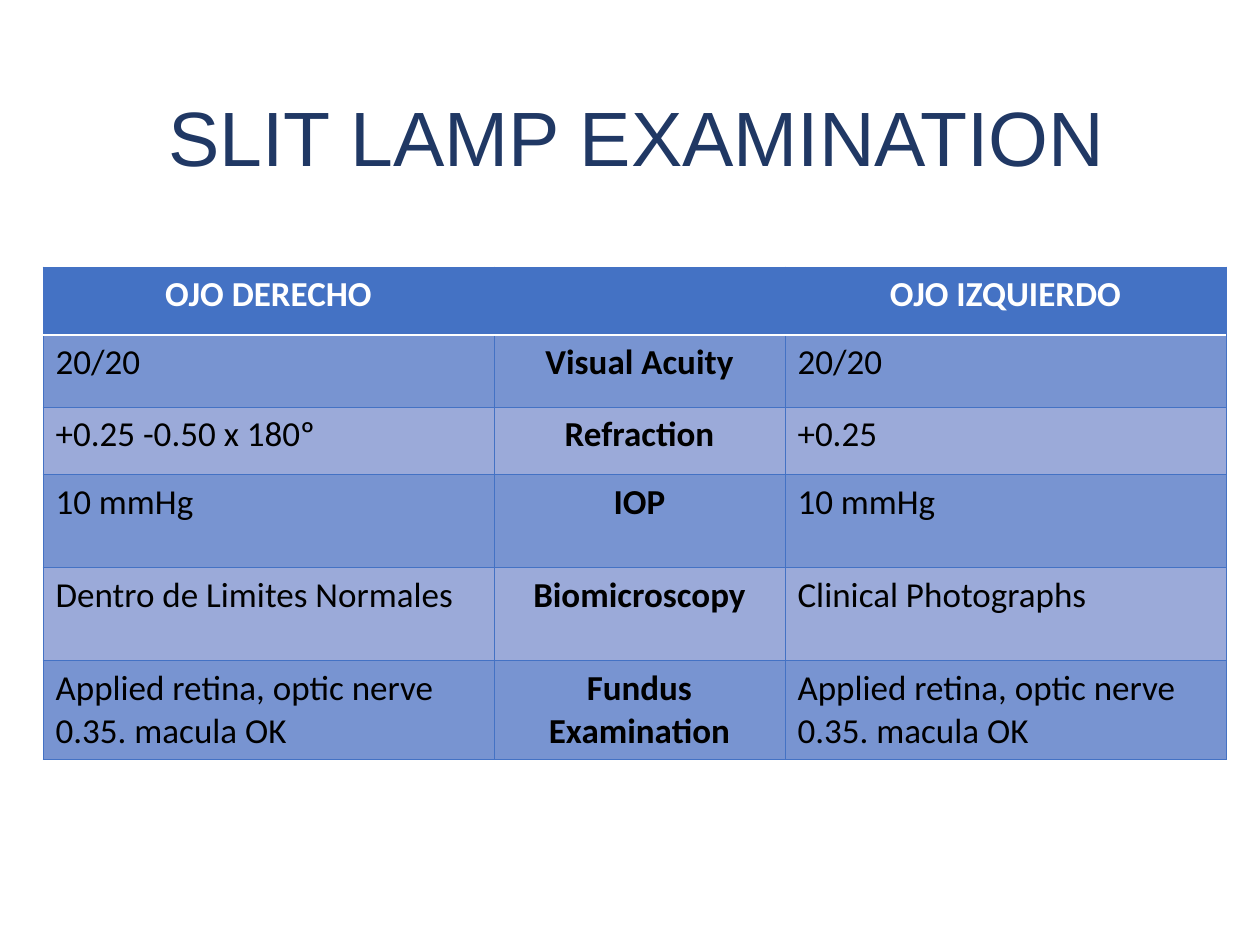
from lxml.etree import SubElement
from pptx import Presentation
from pptx.dml.color import RGBColor
from pptx.enum.text import MSO_ANCHOR, PP_ALIGN
from pptx.oxml.ns import qn
from pptx.util import Emu, Pt

TITLE = "SLIT LAMP EXAMINATION"
EXAMINATION_ROWS = [
    ("OJO DERECHO", "", "OJO IZQUIERDO"),
    ("20/20", "Visual Acuity", "20/20"),
    ("+0.25 -0.50 x 180º", "Refraction", "+0.25"),
    ("10 mmHg", "IOP", "10 mmHg"),
    ("Dentro de Limites Normales", "Biomicroscopy", "Clinical Photographs"),
    ("Applied retina, optic nerve 0.35. macula OK", "Fundus Examination",
     "Applied retina, optic nerve 0.35. macula OK"),
]
COLUMN_WIDTHS = [451, 291, 441]
ROW_HEIGHTS = [68, 72, 68, 93, 93, 99]

NAVY, BLUE, WHITE, BLACK = "203864", "4472C4", "FFFFFF", "000000"
BANDS = ["9BAAD9", "7894D1"]


def px(length):
    return Emu(round(length * 914400 / 126))


def color(value):
    return RGBColor.from_string(value)


def add_text(paragraph, text, font_name, size, text_color, bold=False):
    run = paragraph.add_run()
    run.text = text
    run.font.name = font_name
    run.font.size = Pt(size)
    run.font.bold = bold
    run.font.color.rgb = color(text_color)


def add_border(cell, side, line_color, points):
    properties = cell._tc.get_or_add_tcPr()
    line = SubElement(properties, qn(f"a:ln{side}"), w=str(Pt(points)))
    fill = SubElement(line, qn("a:solidFill"))
    SubElement(fill, qn("a:srgbClr"), val=line_color)


def add_title(slide):
    box = slide.shapes.add_textbox(px(48), px(50), px(1178), px(183))
    frame = box.text_frame
    frame.word_wrap = True
    frame.vertical_anchor = MSO_ANCHOR.MIDDLE
    paragraph = frame.paragraphs[0]
    paragraph.alignment = PP_ALIGN.CENTER
    paragraph.line_spacing = 0.9
    add_text(paragraph, TITLE, "Arial", 44, NAVY)


def fill_cell(cell, text, row, column):
    header = row == 0
    white_side = {0: "B", 1: "T"}.get(row)
    for side in "LRTB":
        if side == white_side:
            add_border(cell, side, WHITE, 1)
        else:
            add_border(cell, side, BLUE, 0.5)
    cell.fill.solid()
    cell.fill.fore_color.rgb = color(BLUE if header else BANDS[row % 2])
    emphasized = header or column == 1
    paragraph = cell.text_frame.paragraphs[0]
    paragraph.alignment = PP_ALIGN.CENTER if emphasized else PP_ALIGN.LEFT
    if text:
        add_text(paragraph, text, "Calibri", 20, WHITE if header else BLACK, emphasized)


def add_examination_table(slide):
    table = slide.shapes.add_table(
        len(ROW_HEIGHTS), len(COLUMN_WIDTHS), px(43), px(267),
        px(sum(COLUMN_WIDTHS)), px(sum(ROW_HEIGHTS))).table
    for column, width in zip(table.columns, COLUMN_WIDTHS):
        column.width = px(width)
    for row, height in zip(table.rows, ROW_HEIGHTS):
        row.height = px(height)
    for row, texts in enumerate(EXAMINATION_ROWS):
        for column, text in enumerate(texts):
            fill_cell(table.cell(row, column), text, row, column)


def main():
    presentation = Presentation()
    presentation.slide_width = px(1260)
    presentation.slide_height = px(945)
    slide = presentation.slides.add_slide(presentation.slide_layouts[6])
    add_title(slide)
    add_examination_table(slide)
    presentation.save("out.pptx")


if __name__ == "__main__":
    main()
